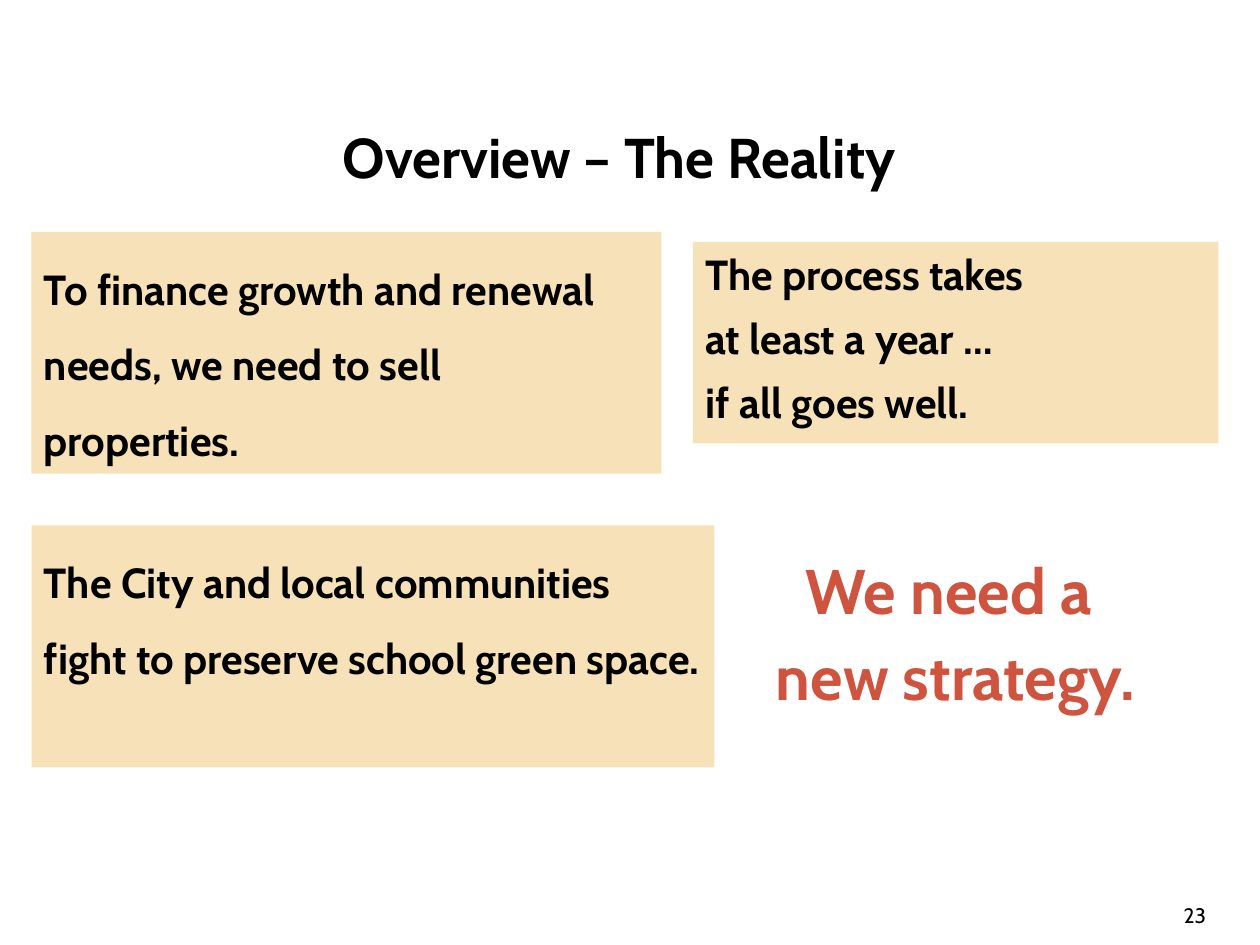
from pptx import Presentation
from pptx.dml.color import RGBColor
from pptx.enum.shapes import MSO_SHAPE as Shape
from pptx.enum.text import MSO_ANCHOR as Anchor, PP_ALIGN as Align
from pptx.util import Inches, Pt

FONT = "Cabin"
COLORS = {"ink": "000000", "panel": "F6E1B8", "accent": "CF543F"}


def write(box, lines, size, color="ink", bold=True, align=Align.LEFT,
          anchor=Anchor.TOP, spacing=1, before=0, after=0):
    """Fill a shape with one paragraph per line; before and after are gaps in points."""
    frame = box.text_frame
    frame.word_wrap = True
    frame.vertical_anchor = anchor
    for index, line in enumerate(lines):
        para = frame.add_paragraph() if index else frame.paragraphs[0]
        para.alignment = align
        para.line_spacing = spacing
        para.space_before = Pt(before if index else 0)
        para.space_after = Pt(after)
        span = para.add_run()
        span.text = line
        span.font.name = FONT
        span.font.size = Pt(size)
        span.font.bold = bold
        span.font.color.rgb = RGBColor.from_string(COLORS[color])


def add_title(page, text):
    title = page.shapes.title
    title.left, title.top = Inches(1.08), Inches(0.92)
    title.width, title.height = Inches(7.67), Inches(0.64)
    write(title, [text], 32, align=Align.CENTER)


def add_panel(page, left, top, width, height, lines, **style):
    panel = page.shapes.add_shape(Shape.RECTANGLE, Inches(left), Inches(top),
                                  Inches(width), Inches(height))
    panel.shadow.inherit = False
    panel.fill.solid()
    panel.fill.fore_color.rgb = RGBColor.from_string(COLORS["panel"])
    panel.line.fill.background()
    write(panel, lines, 24, **style)
    return panel


def add_text(page, left, top, width, height, lines, size, **style):
    box = page.shapes.add_textbox(Inches(left), Inches(top),
                                  Inches(width), Inches(height))
    write(box, lines, size, **style)
    return box


def main():
    deck = Presentation()
    deck.slide_width, deck.slide_height = Inches(10), Inches(7.5)
    page = deck.slides.add_slide(deck.slide_layouts[5])

    add_title(page, "Overview – The Reality")
    finance = add_panel(
        page, 0.25, 1.84, 5, 1.92,
        ["To finance growth and renewal needs, we need to sell properties."],
        spacing=1.5)
    # The wider margin keeps the last word on its own line.
    finance.text_frame.margin_right = Inches(0.2)
    add_panel(
        page, 0.25, 4.17, 5.42, 1.92,
        ["The City and local communities fight to preserve school green space."],
        spacing=1.5)
    add_panel(page, 5.5, 1.92, 4.17, 1.6,
              ["The process takes", "at least a year …", "if all goes well."],
              after=8)
    add_text(page, 5.5, 4.33, 4.17, 1.4, ["We need a ", "new strategy."], 36,
             color="accent", align=Align.CENTER, before=6)
    number = add_text(page, 8.5, 7, 1.17, 0.36, ["23"], 12, bold=False,
                      align=Align.RIGHT, anchor=Anchor.BOTTOM)
    number.text_frame.margin_bottom = 0

    deck.save("out.pptx")


if __name__ == "__main__":
    main()
